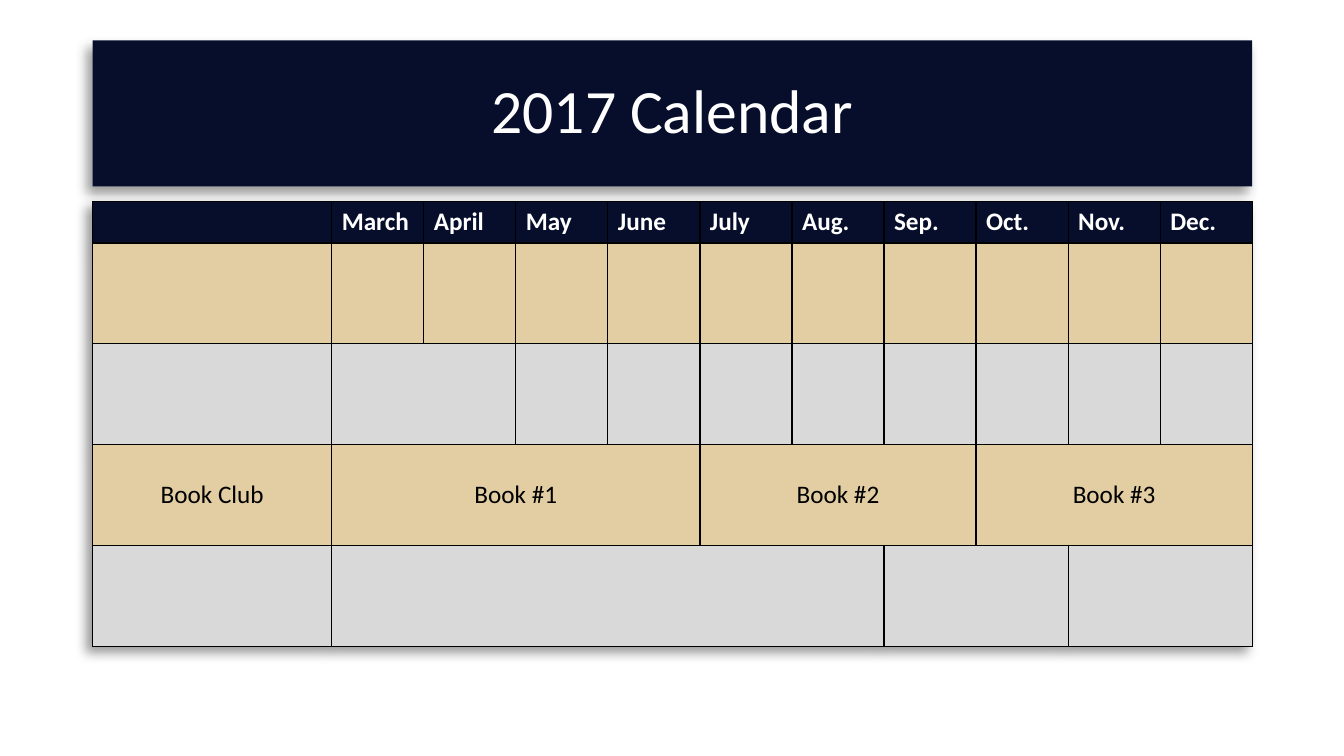
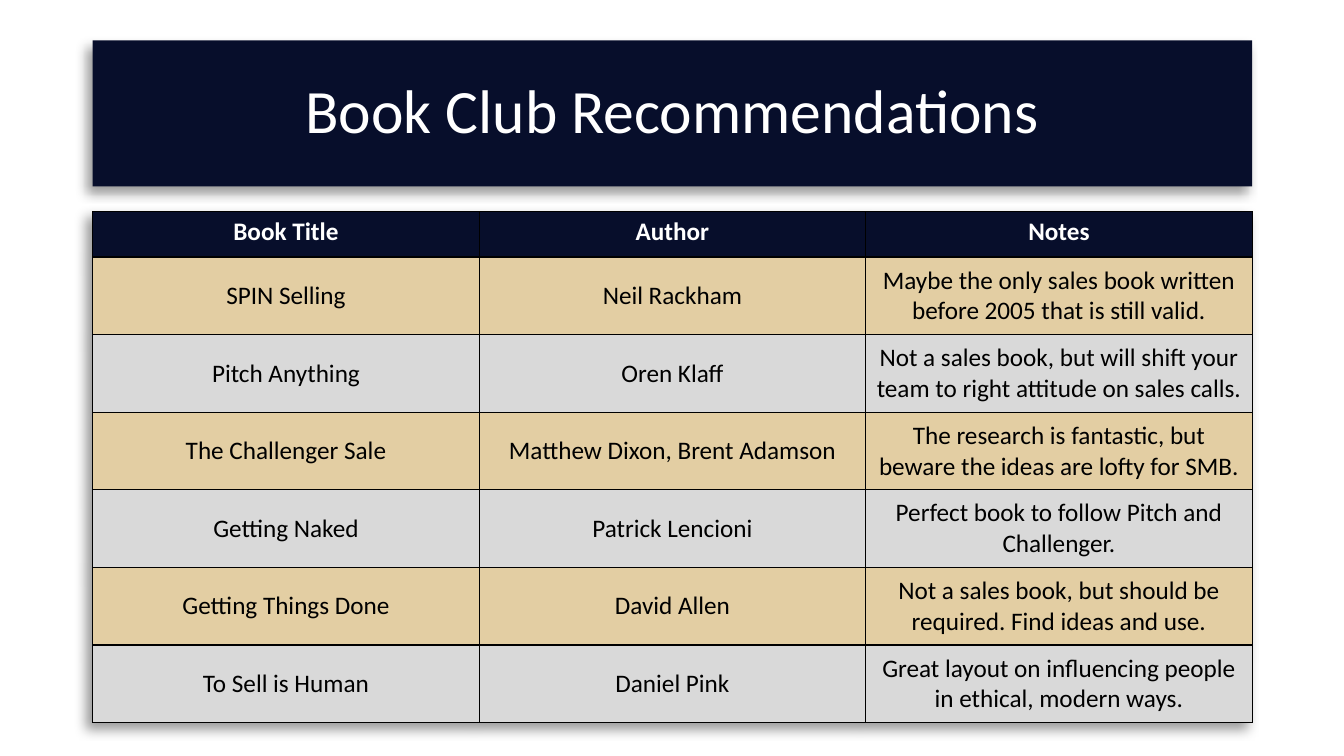
import lxml.etree
import pptx
import pptx.dml.color
import pptx.enum.shapes
import pptx.enum.text
import pptx.oxml
import pptx.oxml.ns
import pptx.util

Inches = pptx.util.Inches
Pt = pptx.util.Pt
RGBColor = pptx.dml.color.RGBColor
ALIGN = pptx.enum.text.PP_ALIGN
ANCHOR = pptx.enum.text.MSO_ANCHOR
qn = pptx.oxml.ns.qn

NAVY = RGBColor(0x07, 0x0E, 0x2B)
SAND = RGBColor(0xE3, 0xCE, 0xA3)
GREY = RGBColor(0xD9, 0xD9, 0xD9)
BLACK = RGBColor(0, 0, 0)
WHITE = RGBColor(0xFF, 0xFF, 0xFF)
FONT = "Calibri"
LEFT, WIDTH = 0.92, 11.5
MONTH_WIDTH = (WIDTH - 2.37) / 10

SHADOW = (
    f'<a:effectLst {pptx.oxml.ns.nsdecls("a")}>'
    f'<a:outerShdw blurRad="{Pt(8)}" dist="{Pt(6)}" dir="{135 * 60000}" '
    'algn="tr" rotWithShape="0"><a:srgbClr val="000000"><a:alpha val="40000"/>'
    '</a:srgbClr></a:outerShdw></a:effectLst>'
)

# Each span is (row, column): number of columns covered.
PAGES = [
    {
        "title": "2017 Calendar",
        "top": 2,
        "columns": [2.37] + [MONTH_WIDTH] * 10,
        "heights": [0.41] + [1] * 4,
        "header_align": ALIGN.LEFT,
        "rows": [
            ["", "March", "April", "May", "June", "July",
             "Aug.", "Sep.", "Oct.", "Nov.", "Dec."],
            [""] * 11,
            [""] * 11,
            ["Book Club", "Book #1", "", "", "", "Book #2", "", "",
             "Book #3", "", ""],
            [""] * 11,
        ],
        "spans": {(2, 1): 2, (3, 1): 4, (3, 5): 3, (3, 8): 3,
                  (4, 1): 6, (4, 7): 2, (4, 9): 2},
    },
    {
        "title": "Book Club Recommendations",
        "top": 2.1,
        "columns": [WIDTH / 3] * 3,
        "heights": [0.45] + [0.77] * 6,
        "header_align": ALIGN.CENTER,
        "rows": [
            ["Book Title", "Author", "Notes"],
            ["SPIN Selling", "Neil Rackham",
             "Maybe the only sales book written before 2005 that is still valid."],
            ["Pitch Anything", "Oren Klaff",
             "Not a sales book, but will shift your team to right attitude on sales calls."],
            ["The Challenger Sale", "Matthew Dixon, Brent Adamson",
             "The research is fantastic, but beware the ideas are lofty for SMB."],
            ["Getting Naked", "Patrick Lencioni",
             "Perfect book to follow Pitch and Challenger."],
            ["Getting Things Done", "David Allen",
             "Not a sales book, but should be required. Find ideas and use."],
            ["To Sell is Human", "Daniel Pink",
             "Great layout on influencing people in ethical, modern ways."],
        ],
        "spans": {},
    },
]


def write_text(frame, text, size=18, color=BLACK, bold=False,
               align=ALIGN.CENTER, line_spacing=None):
    para = frame.paragraphs[0]
    para.alignment = align
    para.line_spacing = line_spacing
    span = para.add_run()
    span.text = text
    span.font.name = FONT
    span.font.size = Pt(size)
    span.font.bold = bold
    span.font.color.rgb = color


def add_borders(cell):
    """Draw a thin black line on all four sides of a table cell."""
    properties = cell._tc.get_or_add_tcPr()
    for side in ("a:lnL", "a:lnR", "a:lnT", "a:lnB"):
        line = lxml.etree.SubElement(properties, qn(side), w=str(Pt(1)))
        fill = lxml.etree.SubElement(line, qn("a:solidFill"))
        lxml.etree.SubElement(fill, qn("a:srgbClr"), val=str(BLACK))


deck = pptx.Presentation()
deck.slide_width = Inches(13.33)
deck.slide_height = Inches(7.5)

for page in PAGES:
    slide = deck.slides.add_slide(deck.slide_layouts[6])

    banner = slide.shapes.add_shape(
        pptx.enum.shapes.MSO_SHAPE.RECTANGLE,
        Inches(LEFT), Inches(0.4), Inches(WIDTH), Inches(1.45))
    banner.fill.solid()
    banner.fill.fore_color.rgb = NAVY
    banner.line.fill.background()
    banner._element.spPr.append(pptx.oxml.parse_xml(SHADOW))
    banner.text_frame.word_wrap = True
    banner.text_frame.vertical_anchor = ANCHOR.MIDDLE
    write_text(banner.text_frame, page["title"], size=44, color=WHITE,
               line_spacing=0.9)

    rows = page["rows"]
    table = slide.shapes.add_table(
        len(rows), len(page["columns"]), Inches(LEFT), Inches(page["top"]),
        Inches(WIDTH), Inches(sum(page["heights"]))).table
    table.first_row = False
    table.horz_banding = False
    table._tbl.tblPr.insert(0, pptx.oxml.parse_xml(SHADOW))
    for column, width in zip(table.columns, page["columns"]):
        column.width = Inches(width)

    for r, texts in enumerate(rows):
        table.rows[r].height = Inches(page["heights"][r])
        is_header = r == 0
        for c, text in enumerate(texts):
            cell = table.cell(r, c)
            add_borders(cell)
            cell.fill.solid()
            cell.fill.fore_color.rgb = NAVY if is_header else (GREY, SAND)[r % 2]
            cell.vertical_anchor = ANCHOR.TOP if is_header else ANCHOR.MIDDLE
            if text:
                write_text(cell.text_frame, text, bold=is_header,
                           color=WHITE if is_header else BLACK,
                           align=page["header_align"] if is_header else ALIGN.CENTER)

    for (r, c), count in page["spans"].items():
        table.cell(r, c).merge(table.cell(r, c + count - 1))

deck.save("out.pptx")
